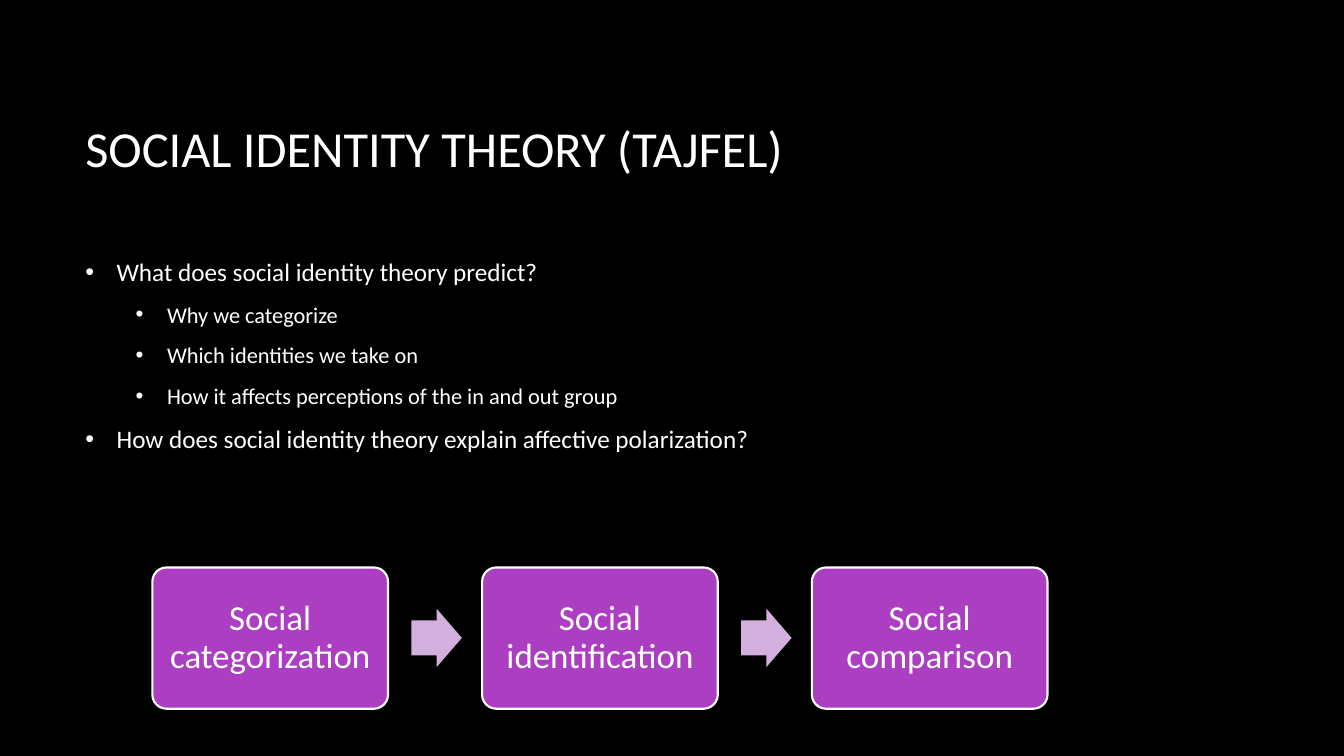
from dataclasses import dataclass

from lxml.etree import SubElement
from pptx import Presentation
from pptx.dml.color import RGBColor
from pptx.enum.shapes import MSO_SHAPE
from pptx.enum.text import MSO_ANCHOR, PP_ALIGN
from pptx.oxml.ns import qn
from pptx.util import Cm, Pt


@dataclass(frozen=True)
class Theme:
    font: str = "Calibri"
    background: RGBColor = RGBColor(0x00, 0x00, 0x00)
    text: RGBColor = RGBColor(0xFF, 0xFF, 0xFF)
    step: RGBColor = RGBColor(0xAC, 0x3E, 0xC1)
    arrow: RGBColor = RGBColor(0xD2, 0xAF, 0xDD)
    title_size: Pt = Pt(36)
    point_sizes: tuple = (Pt(18), Pt(16))
    step_size: Pt = Pt(25)


theme = Theme()


def write(paragraph, text, size):
    paragraph.text = text
    formats = {"name": theme.font, "size": size}
    for attribute, value in formats.items():
        setattr(paragraph.font, attribute, value)
    paragraph.font.color.rgb = theme.text


def add_flow_shape(kind, left, top, width, height, fill, adjustments):
    shape = slide.shapes.add_shape(kind, left, top, width, height)
    shape.shadow.inherit = False
    shape.fill.solid()
    shape.fill.fore_color.rgb = fill
    shape.line.fill.background()
    for index, value in enumerate(adjustments):
        shape.adjustments[index] = value
    return shape


presentation = Presentation()
presentation.slide_width = Cm(33.87)
presentation.slide_height = Cm(19.05)
slide = presentation.slides.add_slide(presentation.slide_layouts[6])
slide.background.fill.solid()
slide.background.fill.fore_color.rgb = theme.background

# Title
margin, content_width = Cm(1.9), Cm(28.14)
title = slide.shapes.add_textbox(margin, Cm(1.7), content_width, Cm(4.04)).text_frame
title.word_wrap = True
title.vertical_anchor = MSO_ANCHOR.MIDDLE
write(title.paragraphs[0], "SOCIAL IDENTITY THEORY (TAJFEL)", theme.title_size)

# Discussion points: (level, text)
points = [
    (0, "What does social identity theory predict?"),
    (1, "Why we categorize"),
    (1, "Which identities we take on"),
    (1, "How it affects perceptions of the in and out group"),
    (0, "How does social identity theory explain affective polarization?"),
]
discussion = slide.shapes.add_textbox(margin, Cm(4.45), content_width, Cm(10.13)).text_frame
discussion.word_wrap = True
discussion.vertical_anchor = MSO_ANCHOR.MIDDLE
discussion.margin_bottom = Cm(1.26)
hanging = Cm(0.79)
for index, (level, text) in enumerate(points):
    point = discussion.add_paragraph() if index else discussion.paragraphs[0]
    point.level = level
    point.space_after = Pt(10)
    properties = point._p.get_or_add_pPr()
    properties.set("marL", str(hanging + level * Cm(1.27)))
    properties.set("indent", str(-hanging))
    SubElement(properties, qn("a:buFont"), typeface="Arial")
    SubElement(properties, qn("a:buChar"), char="•")
    write(point, text, theme.point_sizes[level])

# Process flow
steps = ["Social categorization", "Social identification", "Social comparison"]
flow_left, step_pitch, arrow_offset = Cm(3.84), Cm(8.31), Cm(6.53)
for index, text in enumerate(steps):
    left = flow_left + index * step_pitch
    step = add_flow_shape(MSO_SHAPE.ROUNDED_RECTANGLE, left, Cm(14.3),
                          Cm(5.94), Cm(3.56), theme.step, [0.1])
    step.line.color.rgb = theme.text
    step.line.width = Pt(1.5)
    frame_format = {
        "word_wrap": True,
        "vertical_anchor": MSO_ANCHOR.MIDDLE,
        "margin_left": Cm(0.25),
        "margin_right": Cm(0.25),
        "margin_top": Cm(0.25),
        "margin_bottom": Cm(0.25),
    }
    for attribute, value in frame_format.items():
        setattr(step.text_frame, attribute, value)
    label = step.text_frame.paragraphs[0]
    label.alignment = PP_ALIGN.CENTER
    label.line_spacing = 0.9
    write(label, text, theme.step_size)
    if index < len(steps) - 1:
        add_flow_shape(MSO_SHAPE.RIGHT_ARROW, left + arrow_offset, Cm(15.34),
                       Cm(1.27), Cm(1.47), theme.arrow, [0.6, 0.5])

presentation.save("out.pptx")
